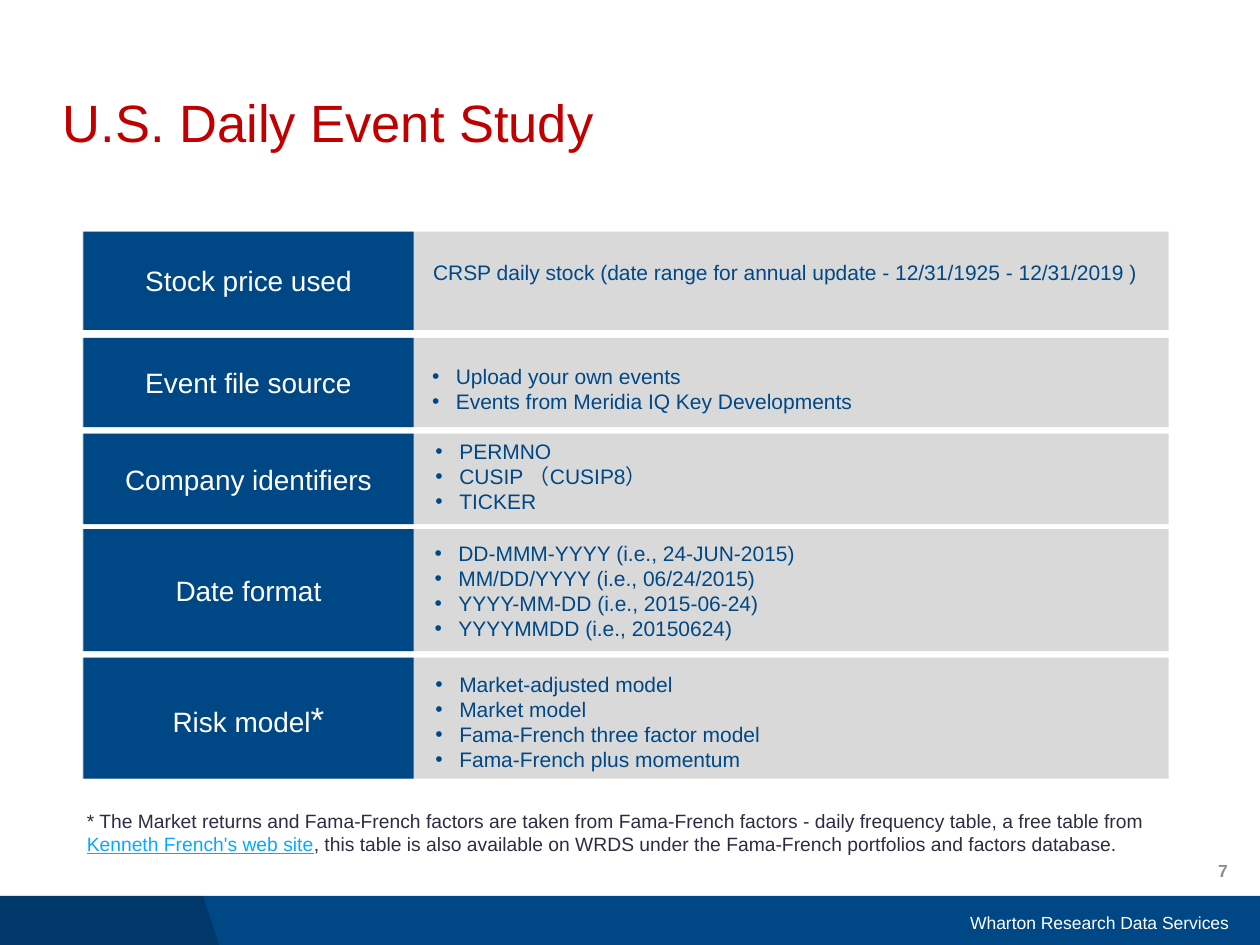
from lxml.etree import SubElement
from pptx import Presentation
from pptx.dml.color import RGBColor
from pptx.enum.shapes import MSO_SHAPE
from pptx.enum.text import MSO_ANCHOR, PP_ALIGN
from pptx.oxml.ns import qn
from pptx.util import Cm, Pt

HUES = {
    "blue": "004785",
    "gray": "D9D9D9",
    "red": "C00000",
    "white": "FFFFFF",
    "black": "000000",
    "page": "8F8F93",
    "note": "2D2C41",
    "link": "06AAFC",
}

ROWS = [
    (4.67, 1.98, 5.11, 8.48, "Stock price used",
     ["CRSP daily stock (date range for annual update - 12/31/1925 - 12/31/2019 )"]),
    (6.81, 1.8, 7.21, 8.46, "Event file source",
     ["Upload your own events", "Events from Meridia IQ Key Developments"]),
    (8.74, 1.83, 8.71, 8.53, "Company identifiers",
     ["PERMNO", "CUSIP （CUSIP8）", "TICKER"]),
    (10.67, 2.46, 10.77, 8.51, "Date format",
     ["DD-MMM-YYYY (i.e., 24-JUN-2015)", "MM/DD/YYYY (i.e., 06/24/2015)",
      "YYYY-MM-DD (i.e., 2015-06-24)", "YYYYMMDD (i.e., 20150624)"]),
    (13.26, 2.44, 13.41, 8.53, "Risk model",
     ["Market-adjusted model", "Market model",
      "Fama-French three factor model", "Fama-French plus momentum"]),
]


class Deck:
    face = "Arial"

    def __init__(self, wide, high):
        self.show = Presentation()
        self.show.slide_width, self.show.slide_height = Cm(wide), Cm(high)
        self.slide = self.show.slides.add_slide(self.show.slide_layouts[6])

    def paint(self, shape, hue):
        shape.shadow.inherit = False
        shape.fill.solid()
        shape.fill.fore_color.rgb = RGBColor.from_string(HUES[hue])
        shape.line.fill.background()
        return shape

    def rect(self, x, y, w, h, hue):
        shape = self.slide.shapes.add_shape(
            MSO_SHAPE.RECTANGLE, Cm(x), Cm(y), Cm(w), Cm(h))
        return self.paint(shape, hue)

    def shade(self, spots, hue, alpha):
        first, *rest = [(Cm(x), Cm(y)) for x, y in spots]
        form = self.slide.shapes.build_freeform(*first)
        form.add_line_segments(rest)
        shape = self.paint(form.convert_to_shape(), hue)
        tone = next(shape.element.iter(qn("a:srgbClr")))
        SubElement(tone, qn("a:alpha"), val=str(alpha * 1000))

    def style(self, font, size, hue, bold=False):
        font.name, font.size, font.bold = self.face, Pt(size), bold
        font.color.rgb = RGBColor.from_string(HUES[hue])

    def fill(self, shape, lines, size, hue, align=PP_ALIGN.LEFT,
             mid=False, dots=False, bold=False):
        frame = shape.text_frame
        frame.word_wrap = True
        frame.vertical_anchor = MSO_ANCHOR.MIDDLE if mid else MSO_ANCHOR.TOP
        for i, line in enumerate(lines):
            para = frame.add_paragraph() if i else frame.paragraphs[0]
            para.text = line
            para.alignment = align
            if dots:
                prop = para._p.get_or_add_pPr()
                prop.set("marL", str(Cm(0.48)))
                prop.set("indent", str(Cm(-0.48)))
                SubElement(prop, qn("a:buFont"), typeface=self.face)
                SubElement(prop, qn("a:buChar"), char="•")
            self.style(para.font, size, hue, bold)
        return frame

    def text(self, x, y, w, h, lines, size, hue, **opts):
        box = self.slide.shapes.add_textbox(Cm(x), Cm(y), Cm(w), Cm(h))
        return self.fill(box, lines, size, hue, **opts)

    def label(self, x, y, w, h, words):
        shape = self.rect(x, y, w, h, "blue")
        return self.fill(shape, [words], 16, "white",
                         align=PP_ALIGN.CENTER, mid=True)

    def row(self, top, high, texty, textx, name, lines):
        self.rect(1.66, top, 21.9, high, "gray")
        frame = self.label(1.68, top, 6.66, high, name)
        self.text(textx, texty, 15.05, 0.5 * len(lines) + 0.26, lines,
                  12, "blue", dots=len(lines) > 1)
        return frame

    def add(self, frame, words, size, hue):
        run = frame.paragraphs[0].add_run()
        run.text = words
        self.style(run.font, size, hue)
        return run


def main():
    deck = Deck(25.4, 19.05)
    deck.rect(0, 18.06, 25.4, 0.99, "blue")
    deck.shade([(0, 18.06), (4.09, 18.06), (4.42, 19.05), (0, 19.05)],
               "black", 20)
    deck.text(16.43, 18.08, 8.59, 1.02, ["Wharton Research Data Services"],
              10, "white", align=PP_ALIGN.RIGHT, mid=True)
    deck.text(19.28, 17.04, 5.72, 1.02, ["7"], 10, "page",
              align=PP_ALIGN.RIGHT, mid=True, bold=True)
    title = deck.text(1.27, 1.83, 21.9, 1.42, ["U.S. Daily Event Study"],
                      30, "red")
    title.margin_left = title.margin_right = 0
    title.paragraphs[0].line_spacing = 0.9
    for row in ROWS:
        frame = deck.row(*row)
    deck.add(frame, "*", 20, "white")
    note = deck.text(
        1.5, 16.18, 21.9, 1.19,
        ["* The Market returns and Fama-French factors are taken from "
         "Fama-French factors - daily frequency table, a free table from "],
        11, "note")
    link = deck.add(note, "Kenneth French's web site", 11, "link")
    link.font.underline = True
    deck.add(note, ", this table is also available on WRDS under the "
             "Fama-French portfolios and factors database.", 11, "note")
    deck.show.save("out.pptx")


if __name__ == "__main__":
    main()
